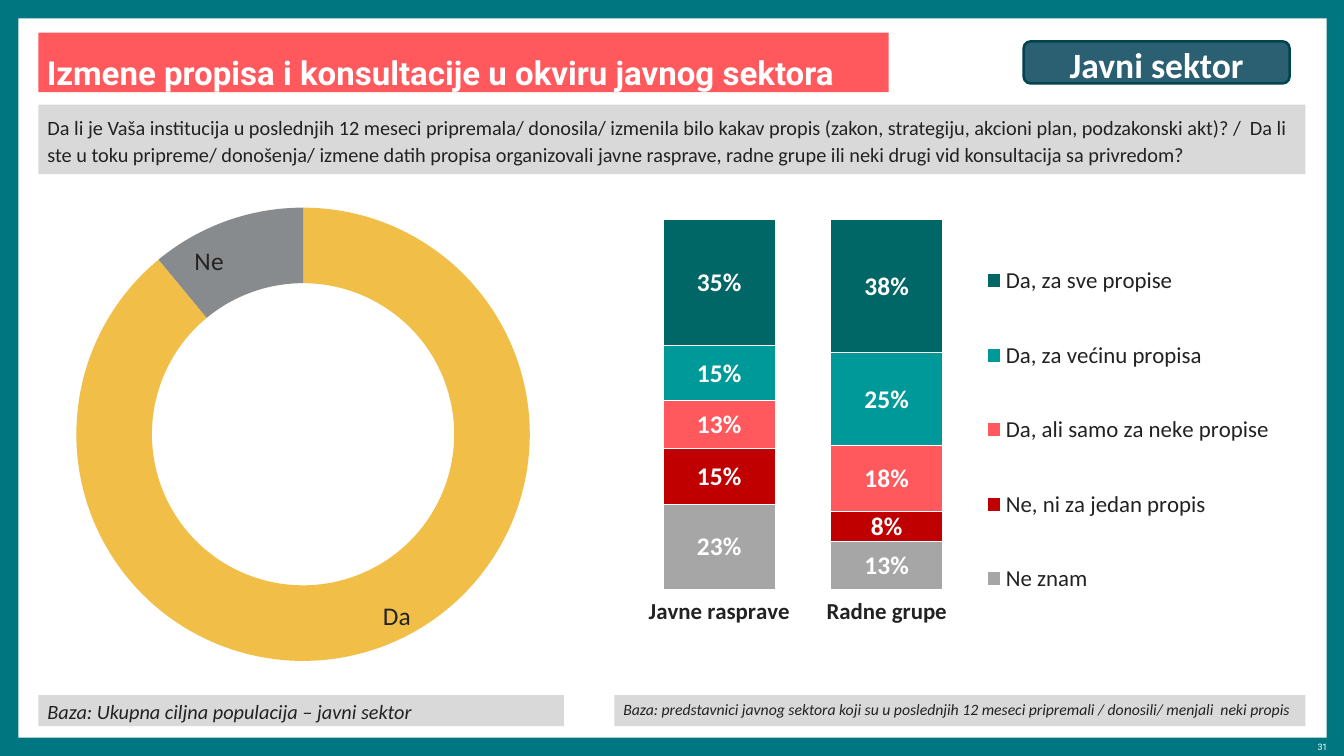
from lxml import etree
from pptx import Presentation
from pptx.chart.data import CategoryChartData
from pptx.dml.color import RGBColor
from pptx.enum.chart import XL_CHART_TYPE as CT, XL_LEGEND_POSITION as LP
from pptx.enum.shapes import MSO_SHAPE as SHAPE
from pptx.enum.text import MSO_ANCHOR as ANCHOR, PP_ALIGN as ALIGN
from pptx.oxml.ns import qn
from pptx.util import Cm, Pt

TEAL = RGBColor(0x00, 0x76, 0x81)
WHITE = RGBColor(0xFF, 0xFF, 0xFF)
CORAL = RGBColor(0xFF, 0x58, 0x5D)
LIGHT = RGBColor(0xD9, 0xD9, 0xD9)
INK = RGBColor(0x22, 0x22, 0x23)
BADGE = RGBColor(0x2B, 0x5F, 0x72)
BADGE_LINE = RGBColor(0x00, 0x45, 0x4C)
YELLOW = RGBColor(0xF1, 0xBE, 0x48)
SLATE = RGBColor(0x88, 0x8B, 0x8D)
GRAY = RGBColor(0xA6, 0xA6, 0xA6)
RED = RGBColor(0xC0, 0x00, 0x00)
AQUA = RGBColor(0x00, 0x99, 0x99)
PINE = RGBColor(0x00, 0x66, 0x66)


def add_box(box, fill, text="", size=16, color=INK, bold=False, italic=False,
            font="Calibri", spacing=1.1, kind=SHAPE.RECTANGLE):
    sp = s.shapes.add_shape(kind, *map(Cm, box))
    sp.shadow.inherit = False
    sp.line.fill.background()
    sp.fill.solid()
    sp.fill.fore_color.rgb = fill
    tf = sp.text_frame
    tf.word_wrap = True
    tf.vertical_anchor = ANCHOR.MIDDLE
    tf.margin_left = tf.margin_right = Cm(0.25)
    tf.margin_top = tf.margin_bottom = 0
    p = tf.paragraphs[0]
    p.text = text
    p.alignment = ALIGN.LEFT
    p.line_spacing = spacing
    for r in p.runs:
        r.font.name, r.font.size, r.font.color.rgb = font, Pt(size), color
        r.font.bold, r.font.italic = bold, italic
    return sp


def set_layout(parent, index, **values):
    for old in parent.findall(qn("c:layout")):
        parent.remove(old)
    layout = etree.Element(qn("c:layout"))
    manual = etree.SubElement(layout, qn("c:manualLayout"))
    for tag, value in values.items():
        etree.SubElement(manual, qn("c:" + tag)).set("val", str(value))
    parent.insert(index, layout)


prs = Presentation()
prs.slide_width, prs.slide_height = Cm(37.34), Cm(21.01)
s = prs.slides.add_slide(prs.slide_layouts[6])
s.background.fill.solid()
s.background.fill.fore_color.rgb = TEAL

add_box((0.51, 0.51, 36.35, 19.99), WHITE)

tf = s.shapes.add_textbox(Cm(34.87), Cm(20.57), Cm(2.01), Cm(0.33)).text_frame
tf.word_wrap = True
tf.margin_left = tf.margin_right = tf.margin_top = tf.margin_bottom = 0
p = tf.paragraphs[0]
p.text = "31"
p.alignment = ALIGN.RIGHT
p.line_spacing = 1.1
r = p.runs[0]
r.font.name, r.font.size, r.font.color.rgb = "Roboto", Pt(7), WHITE

title = add_box((1.07, 0.91, 23.62, 1.65), CORAL,
                "Izmene propisa i konsultacije u okviru javnog sektora",
                26, WHITE, bold=True, font="Roboto", spacing=Pt(41))
title.text_frame.margin_left = Cm(0.23)
title.text_frame.margin_top = Cm(0.2)

add_box((1.07, 2.91, 35.2, 1.93), LIGHT,
        "Da li je Vaša institucija u poslednjih 12 meseci pripremala/ donosila/ "
        "izmenila bilo kakav propis (zakon, strategiju, akcioni plan, podzakonski "
        "akt)? /  Da li ste u toku pripreme/ donošenja/ izmene datih propisa "
        "organizovali javne rasprave, radne grupe ili neki drugi vid konsultacija "
        "sa privredom?")

data = CategoryChartData()
data.categories = ["Da", "Ne"]
data.add_series("Series 1", (89, 11))
data.add_series("Series 2", (89, 11, 0, 0, 0))
chart = s.shapes.add_chart(CT.DOUGHNUT, Cm(1.03), Cm(5.77), Cm(16.61), Cm(12.6), data).chart
chart.has_legend = chart.has_title = False
chart.font.name, chart.font.size, chart.font.color.rgb = "Roboto", Pt(18), INK
plot = chart.plots[0]
plot._element.find(qn("c:holeSize")).set("val", "30")
inner, outer = plot.series
for i, color in enumerate((YELLOW, SLATE)):
    inner.points[i].format.fill.background()
    inner.points[i].format.line.fill.background()
    pt = outer.points[i]
    pt.format.fill.solid()
    pt.format.fill.fore_color.rgb = color
    pt.format.line.fill.background()
    font = pt.data_label.font
    font.name, font.size, font.color.rgb = "Calibri", Pt(20), INK
labels = outer.data_labels
labels.show_category_name = labels.show_value = labels.show_percentage = False
offsets = ((0.05, 0.01), (-0.05, 0.01))
for label, (dx, dy) in zip(outer._element.iter(qn("c:dLbl")), offsets):
    for tag, shown in (("showVal", "0"), ("showCatName", "1"), ("showPercent", "0")):
        label.find(qn("c:" + tag)).set("val", shown)
    set_layout(label, 1, x=dx, y=dy)
set_layout(chart._chartSpace.chart.plotArea, 0, layoutTarget="inner",
           xMode="edge", yMode="edge", x=0.04, y=0, w=0.81, h=1)

answers = (
    ("Ne znam", (23, 13), GRAY),
    ("Ne, ni za jedan propis", (15, 8), RED),
    ("Da, ali samo za neke propise", (13, 18), CORAL),
    ("Da, za većinu propisa", (15, 25), AQUA),
    ("Da, za sve propise", (35, 38), PINE),
)
data = CategoryChartData()
data.categories = ["Javne rasprave", "Radne grupe"]
for name, values, color in answers:
    data.add_series(name, values)
chart = s.shapes.add_chart(CT.COLUMN_STACKED, Cm(17.66), Cm(6.1), Cm(18.24), Cm(11.67), data).chart
chart.has_title = False
chart.font.name, chart.font.size, chart.font.color.rgb = "Roboto", Pt(18), INK
plot = chart.plots[0]
plot.gap_width, plot.overlap = 50, 100
plot.vary_by_categories = False
for series, (name, values, color) in zip(plot.series, answers):
    series.format.fill.solid()
    series.format.fill.fore_color.rgb = color
    series.format.line.color.rgb = WHITE
    series.format.line.width = Pt(0.75)
    labels = series.data_labels
    labels.show_value = True
    labels.number_format, labels.number_format_is_linked = '#"%"', False
    font = labels.font
    font.name, font.size, font.bold, font.color.rgb = "Calibri", Pt(20), True, WHITE

axis = chart.value_axis
axis.minimum_scale, axis.maximum_scale, axis.major_unit = 0, 100, 20
axis.has_major_gridlines = False
axis.visible = False
axis = chart.category_axis
axis.format.line.fill.background()
font = axis.tick_labels.font
font.name, font.size, font.bold, font.color.rgb = "Calibri", Pt(18), True, INK

chart.has_legend = True
legend = chart.legend
legend.position = LP.RIGHT
legend.include_in_layout = False
legend.font.name, legend.font.size, legend.font.color.rgb = "Calibri", Pt(18), INK
set_layout(legend._element, 1, xMode="edge", yMode="edge", x=0.5, y=0, w=0.5, h=1)
set_layout(chart._chartSpace.chart.plotArea, 0, layoutTarget="inner",
           xMode="edge", yMode="edge", x=0, y=0, w=0.51, h=0.88)

badge = add_box((28.44, 1.15, 7.39, 1.17), BADGE, "Javni sektor", 28, WHITE,
                bold=True, kind=SHAPE.ROUNDED_RECTANGLE)
badge.line.color.rgb = BADGE_LINE
badge.line.width = Pt(2)
badge.text_frame.paragraphs[0].alignment = ALIGN.CENTER

add_box((17.07, 19.32, 19.2, 0.86), LIGHT,
        "Baza: predstavnici javnog sektora koji su u poslednjih 12 meseci "
        "pripremali / donosili/ menjali  neki propis", 12.4, italic=True, spacing=0.9)
add_box((1.07, 19.32, 14.6, 0.86), LIGHT,
        "Baza: Ukupna ciljna populacija – javni sektor", italic=True)

prs.save("out.pptx")
